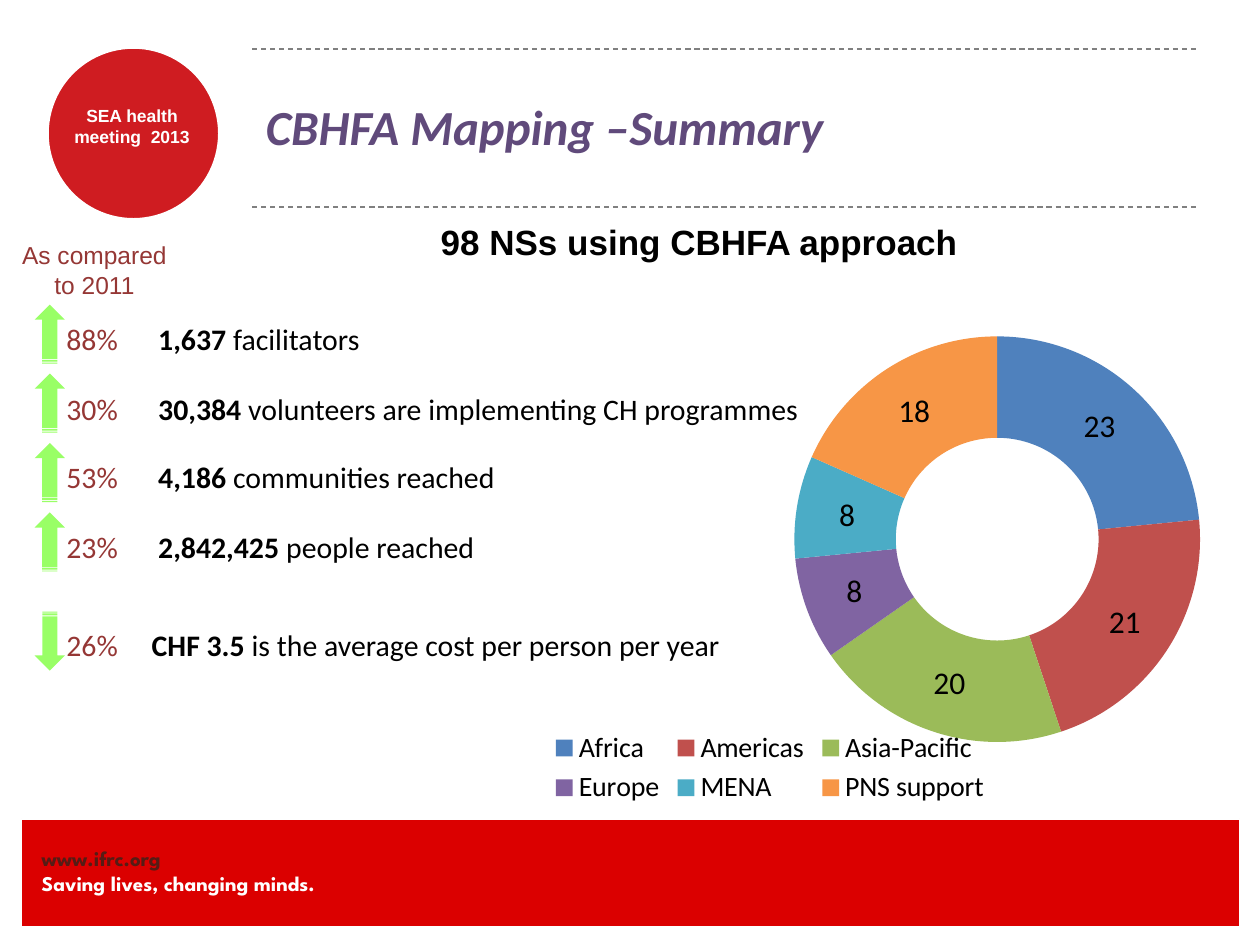
from lxml import etree
from pptx import Presentation
from pptx import util as u
from pptx.chart.data import CategoryChartData
from pptx.dml.color import RGBColor
from pptx.enum import chart as ch, dml, shapes, text
from pptx.oxml import parse_xml
from pptx.oxml.ns import nsdecls, qn

Cm, Pt = u.Cm, u.Pt

# Content
COLORS = {"footer": "DB0000", "badge": "CF1C21", "white": "FFFFFF", "black": "000000",
          "site": "551C15", "rule": "808080", "title": "604A7B", "change": "953735",
          "arrow": "99FF66"}
# change, figure, explanation, text top, arrow top, arrow rotation, tab (cm)
RESULTS = [
    ("88%", "1,637", "facilitators", 6.35, 6.43, 270, 1.85),
    ("30%", "30,384", "volunteers are implementing CH programmes", 7.75, 7.82, 270, 1.85),
    ("53%", "4,186", "communities reached", 9.12, 9.22, 270, 1.85),
    ("23%", "2,842,425", "people reached", 10.54, 10.62, 270, 1.85),
    ("26%", "CHF 3.5", "is the average cost per person per year", 12.52, 12.62, 90, 1.72),
]
REGIONS = [("Africa", 23, "4F81BD"), ("Americas", 21, "C0504D"),
           ("Asia-Pacific", 20, "9BBB59"), ("Europe", 8, "8064A2"),
           ("MENA", 8, "4BACC6"), ("PNS support", 18, "F79646")]
PLOT_AREA = {"x": 0.52, "y": 0.1, "w": 0.46, "h": 0.77}

prs = Presentation()
prs.slide_width, prs.slide_height = Cm(25.4), Cm(19.05)
slide = prs.slides.add_slide(prs.slide_layouts[6])


def rgb(name):
    return RGBColor.from_string(COLORS[name])


def add_text(paragraphs, left, top, width, height, size, font="Calibri",
             align=text.PP_ALIGN.LEFT, anchor=text.MSO_ANCHOR.TOP, inset=True,
             italic=False, tab=None):
    """Each paragraph is a list of (text, colour name, bold) runs."""
    frame = slide.shapes.add_textbox(Cm(left), Cm(top), Cm(width), Cm(height)).text_frame
    frame.word_wrap = True
    frame.vertical_anchor = anchor
    if not inset:
        frame.margin_left = frame.margin_right = frame.margin_top = frame.margin_bottom = 0
    for i, runs in enumerate(paragraphs):
        para = frame.paragraphs[0] if i == 0 else frame.add_paragraph()
        para.alignment = align
        if tab:
            stops = etree.SubElement(para._p.get_or_add_pPr(), qn("a:tabLst"))
            etree.SubElement(stops, qn("a:tab"), pos=str(Cm(tab)), algn="l")
        for words, color, bold in runs:
            run = para.add_run()
            run.text = words
            run.font.name, run.font.size = font, Pt(size)
            run.font.bold, run.font.italic = bold, italic
            run.font.color.rgb = rgb(color)


def add_block(kind, left, top, width, height, fill, border=None, rotation=0):
    block = slide.shapes.add_shape(kind, Cm(left), Cm(top), Cm(width), Cm(height))
    block.shadow.inherit = False
    block.rotation = rotation
    block.fill.solid()
    block.fill.fore_color.rgb = rgb(fill)
    if border:
        block.line.color.rgb = rgb("white")
        block.line.width = Pt(border)
    else:
        block.line.fill.background()


# Footer band
add_block(shapes.MSO_SHAPE.RECTANGLE, 0.43, 16.51, 24.56, 2.18, "footer", border=0.75)
add_text([[("www.ifrc.org", "site", True)],
          [("Saving lives, changing minds.", "white", True)]],
         0.84, 17.04, 8.69, 1.02, 12, font="League Spartan", inset=False)

# Meeting badge
add_block(shapes.MSO_SHAPE.OVAL, 0.94, 0.94, 3.5, 3.5, "badge", border=2.5)
add_text([[("SEA health meeting  2013", "white", True)]], 1.07, 2.11, 3.18, 0.86, 10,
         font="Arial", align=text.PP_ALIGN.CENTER, inset=False)

# Title between dashed rules
for rule_y in (0.99, 4.17):
    rule = slide.shapes.add_connector(shapes.MSO_CONNECTOR.STRAIGHT,
                                      Cm(5.08), Cm(rule_y), Cm(24.13), Cm(rule_y))
    rule.line.color.rgb = rgb("rule")
    rule.line.width = Pt(0.75)
    rule.line.dash_style = dml.MSO_LINE.DASH
    etree.SubElement(rule._element.spPr, qn("a:effectLst"))
add_text([[("CBHFA Mapping –Summary", "title", True)]], 5.11, 0.94, 19.05, 3.18, 28,
         anchor=text.MSO_ANCHOR.MIDDLE, italic=True)

# Headings
add_text([[("98 NSs using CBHFA approach", "black", True)]], 4.9, 4.32, 18.39, 1.12, 20,
         font="Arial", align=text.PP_ALIGN.CENTER)
add_text([[("As compared", "change", False)], [("to 2011", "change", False)]],
         0.1, 4.72, 3.61, 1.45, 14, font="Arial", align=text.PP_ALIGN.CENTER)

# Regional doughnut
data = CategoryChartData()
data.categories = [region for region, _, _ in REGIONS]
data.add_series("Series 1", [count for _, count, _ in REGIONS])
regions_chart = slide.shapes.add_chart(ch.XL_CHART_TYPE.DOUGHNUT, Cm(6.35), Cm(5.72),
                                       Cm(18.34), Cm(10.62), data).chart
regions_chart.has_title = False
regions_chart.font.name, regions_chart.font.size = "Calibri", Pt(10)
regions_chart.font.color.rgb = rgb("black")
regions_chart.has_legend = True
legend = regions_chart.legend
legend.position = ch.XL_LEGEND_POSITION.BOTTOM
legend.include_in_layout = False
legend.font.size = Pt(16)

doughnut = regions_chart.plots[0]
doughnut.has_data_labels = True
labels = doughnut.data_labels
labels.show_value, labels.show_percentage = True, False
labels.font.size = Pt(18)
labels.font.color.rgb = rgb("black")
for i, (_, _, color) in enumerate(REGIONS):
    slice_fill = doughnut.series[0].points[i].format.fill
    slice_fill.solid()
    slice_fill.fore_color.rgb = RGBColor.from_string(color)

plot_area = regions_chart._chartSpace.chart.plotArea
for old_layout in plot_area.findall(qn("c:layout")):
    plot_area.remove(old_layout)
sides = "".join(f'<c:{side} val="{value}"/>' for side, value in PLOT_AREA.items())
plot_area.insert(0, parse_xml(
    f'<c:layout {nsdecls("c")}><c:manualLayout><c:layoutTarget val="inner"/>'
    f'<c:xMode val="edge"/><c:yMode val="edge"/>{sides}</c:manualLayout></c:layout>'))

# Results with change arrows
for change, figure, meaning, text_top, arrow_top, rotation, tab in RESULTS:
    add_block(shapes.MSO_SHAPE.STRIPED_RIGHT_ARROW, 0.41, arrow_top, 1.19, 0.61, "arrow",
              rotation=rotation)
    add_text([[(change + "\t", "change", False), (figure + " ", "black", True),
               (meaning, "black", False)]], 1.09, text_top, 16.61, 0.99, 17, tab=tab)

prs.save("out.pptx")
